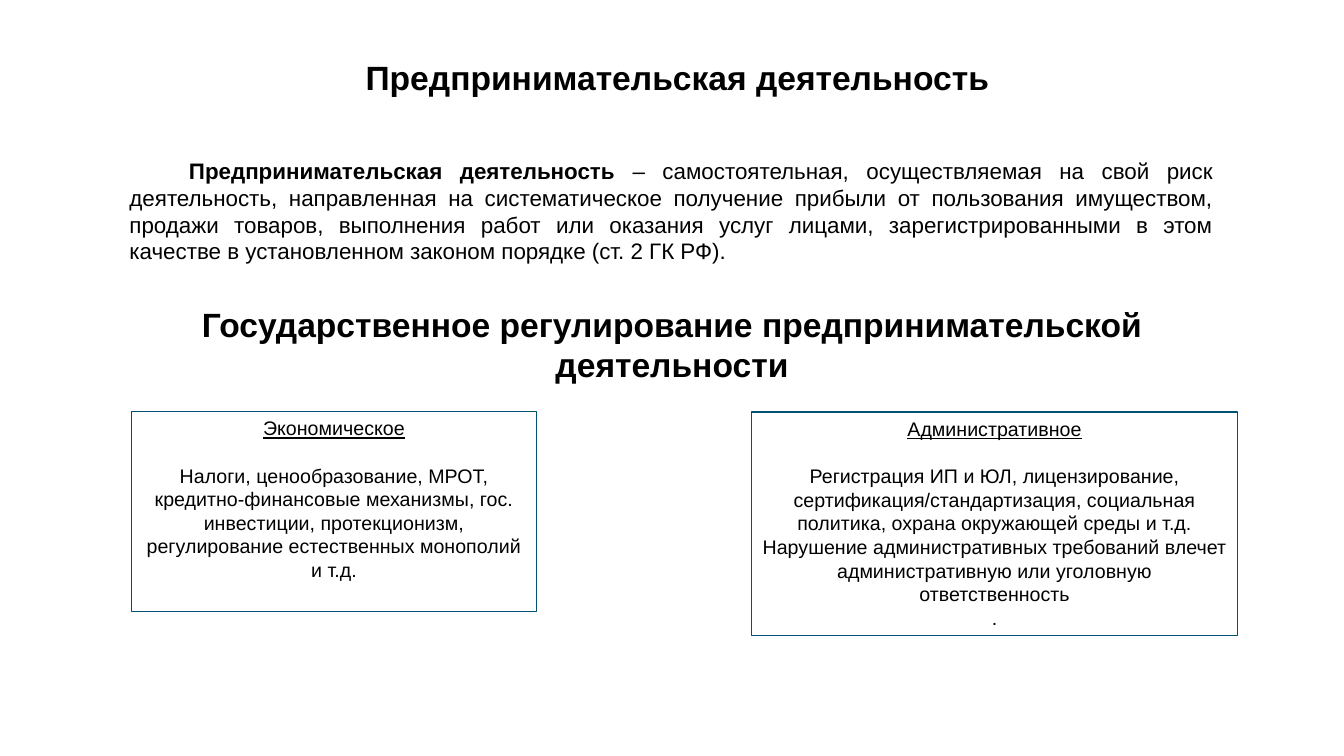
import pptx
import pptx.util
import pptx.dml.color
import pptx.enum.shapes
import pptx.enum.text

Pt = pptx.util.Pt
Inches = pptx.util.Inches
ALIGN = pptx.enum.text.PP_ALIGN


def colour(hex_value):
    return pptx.dml.color.RGBColor.from_string(hex_value)


class LawSlide:
    """Holds the style and the current slide; lengths are shares of its size."""
    FONT, INK, FRAME = "Arial", "000000", "025373"
    HEADING = {"size": Pt(24), "bold": True}
    BODY = {"size": Pt(16)}
    CARD = {"size": Pt(14)}

    def __init__(self, deck):
        self.width, self.height = deck.slide_width, deck.slide_height
        self.slide = deck.slides.add_slide(deck.slide_layouts[6])

    def place(self, left, top, width, height):
        return [round(share * side) for share, side in zip(
            (left, top, width, height), (self.width, self.height) * 2)]

    def fill_paragraph(self, paragraph, runs, style, align):
        """Each run is a pair: its text and its own format values."""
        paragraph.alignment = align
        for text, extra in runs:
            run = paragraph.add_run()
            run.text = text
            for key, value in {"name": self.FONT, **style, **extra}.items():
                setattr(run.font, key, value)
            run.font.color.rgb = colour(self.INK)

    def text(self, area, runs, style, align=ALIGN.CENTER):
        frame = self.slide.shapes.add_textbox(*self.place(*area)).text_frame
        frame.word_wrap = True
        self.fill_paragraph(frame.paragraphs[0], runs, style, align)
        return frame.paragraphs[0]

    def card(self, area, title, lines):
        box = self.slide.shapes.add_shape(
            pptx.enum.shapes.MSO_SHAPE.RECTANGLE, *self.place(*area))
        box.shadow.inherit = False
        box.fill.background()
        box.line.color.rgb = colour(self.FRAME)
        box.line.width = Pt(0.75)
        frame = box.text_frame
        frame.word_wrap = True
        frame.vertical_anchor = pptx.enum.text.MSO_ANCHOR.TOP
        self.fill_paragraph(frame.paragraphs[0], [(title, {"underline": True})],
                            self.CARD, ALIGN.CENTER)
        for index, line in enumerate(lines):
            paragraph = frame.add_paragraph()
            if index == 0:
                paragraph.space_before = Pt(17)
            self.fill_paragraph(paragraph, [(line, {})], self.CARD, ALIGN.CENTER)


def main():
    deck = pptx.Presentation()
    deck.slide_width, deck.slide_height = Inches(13.33), Inches(7.5)
    page = LawSlide(deck)

    # Regulation heading
    page.text((0.06, 0.395, 0.88, 0.12),
              [("Государственное регулирование предпринимательской деятельности", {})],
              page.HEADING)

    # Two kinds of regulation
    page.card((0.098, 0.544, 0.301, 0.265), "Экономическое", [
        "Налоги, ценообразование, МРОТ, кредитно-финансовые механизмы, гос. "
        "инвестиции, протекционизм, регулирование естественных монополий и т.д."])
    page.card((0.559, 0.545, 0.362, 0.296), "Административное", [
        "Регистрация ИП и ЮЛ, лицензирование, сертификация/стандартизация, "
        "социальная политика, охрана окружающей среды и т.д.",
        "Нарушение административных требований влечет административную или "
        "уголовную ответственность",
        "."])

    # Definition with an indented first line
    definition = page.text((0.089, 0.201, 0.821, 0.157), [
        ("Предпринимательская деятельность", {"bold": True}),
        (" – самостоятельная, осуществляемая на свой риск деятельность, "
         "направленная на систематическое получение прибыли от пользования "
         "имуществом, продажи товаров, выполнения работ или оказания услуг "
         "лицами, зарегистрированными в этом качестве в установленном законом "
         "порядке (ст. 2 ГК РФ).", {})], page.BODY, ALIGN.JUSTIFY)
    definition._p.get_or_add_pPr().set("indent", str(Inches(0.59)))

    # Slide title
    page.text((0.25, 0.069, 0.508, 0.067),
              [("Предпринимательская деятельность", {})], page.HEADING)

    deck.save("out.pptx")


if __name__ == "__main__":
    main()
